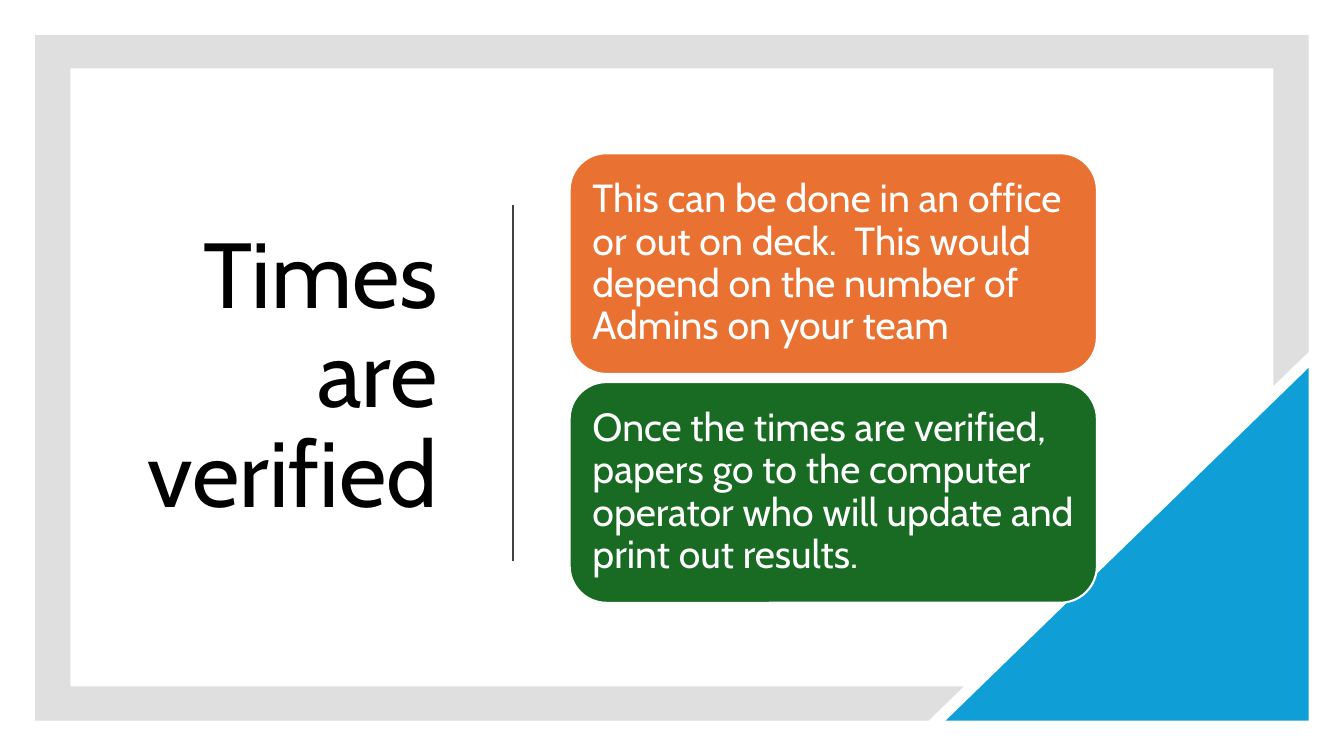
from lxml import etree
from pptx import Presentation
from pptx import util as u
from pptx.dml.color import RGBColor
from pptx.enum import shapes, text
from pptx.oxml.ns import qn

COLORS = {
    "frame": "808080", "corner": "0F9ED5", "rule": "404040",
    "office": "E97132", "papers": "196B24", "white": "FFFFFF", "black": "000000",
}
FONT = "Cabin"
FRAME = [
    (0.35, 0.35), (12.98, 0.35), (12.98, 3.49), (12.63, 3.83), (12.63, 0.68),
    (0.7, 0.68), (0.7, 6.81), (9.56, 6.81), (9.21, 7.15), (0.35, 7.15),
]
CARDS = [
    ("office", "This can be done in an office or out on deck.  This would "
               "depend on the number of Admins on your team"),
    ("papers", "Once the times are verified, papers go to the computer "
               "operator who will update and print out results."),
]


def color(name):
    return RGBColor.from_string(COLORS[name])


def paint(shape, fill, line=None):
    shape.shadow.inherit = False
    shape.fill.solid()
    shape.fill.fore_color.rgb = color(fill)
    if line:
        shape.line.color.rgb = color(line)
        shape.line.width = u.Pt(1.5)
    else:
        shape.line.fill.background()


def write(shape, words, size, tint, align, pad_x, pad_y):
    frame = shape.text_frame
    frame.word_wrap = True
    frame.vertical_anchor = text.MSO_ANCHOR.MIDDLE
    frame.margin_left = frame.margin_right = u.Inches(pad_x)
    frame.margin_top = frame.margin_bottom = u.Inches(pad_y)
    para = frame.paragraphs[0]
    para.alignment = align
    para.line_spacing = 0.9
    run = para.add_run()
    run.text = words
    run.font.name = FONT
    run.font.size = u.Pt(size)
    run.font.color.rgb = color(tint)


def add_frame(slide):
    pts = [(u.Inches(x), u.Inches(y)) for x, y in FRAME]
    pen = slide.shapes.build_freeform(*pts[0])
    pen.add_line_segments(pts[1:])
    frame = pen.convert_to_shape()
    paint(frame, "frame")
    # 25% opacity
    tone = frame.element.spPr.find(qn("a:solidFill"))[0]
    etree.SubElement(tone, qn("a:alpha")).set("val", "25000")


def add_corner(slide):
    corner = slide.shapes.add_shape(
        shapes.MSO_SHAPE.RIGHT_TRIANGLE,
        u.Inches(9.38), u.Inches(3.65), u.Inches(3.6), u.Inches(3.5))
    paint(corner, "corner")
    corner.element.spPr.xfrm.set("flipH", "1")


def add_title(slide, words):
    box = slide.shapes.add_textbox(
        u.Inches(1.1), u.Inches(1.3), u.Inches(3.34), u.Inches(4.9))
    write(box, words, 66, "black", text.PP_ALIGN.RIGHT, 0.1, 0.05)


def add_rule(slide):
    rule = slide.shapes.add_connector(
        shapes.MSO_CONNECTOR.STRAIGHT,
        u.Inches(5.09), u.Inches(2.03), u.Inches(5.09), u.Inches(5.57))
    rule.line.color.rgb = color("rule")
    rule.line.width = u.Pt(1.5)
    etree.SubElement(rule.element.spPr, qn("a:effectLst"))


def add_card(slide, top, fill, words):
    card = slide.shapes.add_shape(
        shapes.MSO_SHAPE.ROUNDED_RECTANGLE,
        u.Inches(5.65), u.Inches(top), u.Inches(5.23), u.Inches(2.19))
    paint(card, fill, "white")
    write(card, words, 28, "white", text.PP_ALIGN.LEFT, 0.12, 0.12)


def main():
    deck = Presentation()
    deck.slide_width = u.Inches(13.33)
    deck.slide_height = u.Inches(7.5)
    slide = deck.slides.add_slide(deck.slide_layouts[6])

    # Backdrop
    add_frame(slide)
    add_corner(slide)

    # Title and divider
    add_title(slide, "Times are verified")
    add_rule(slide)

    # Stacked cards
    for row, (fill, words) in enumerate(CARDS):
        add_card(slide, 1.52 + row * 2.27, fill, words)

    deck.save("out.pptx")


if __name__ == "__main__":
    main()
